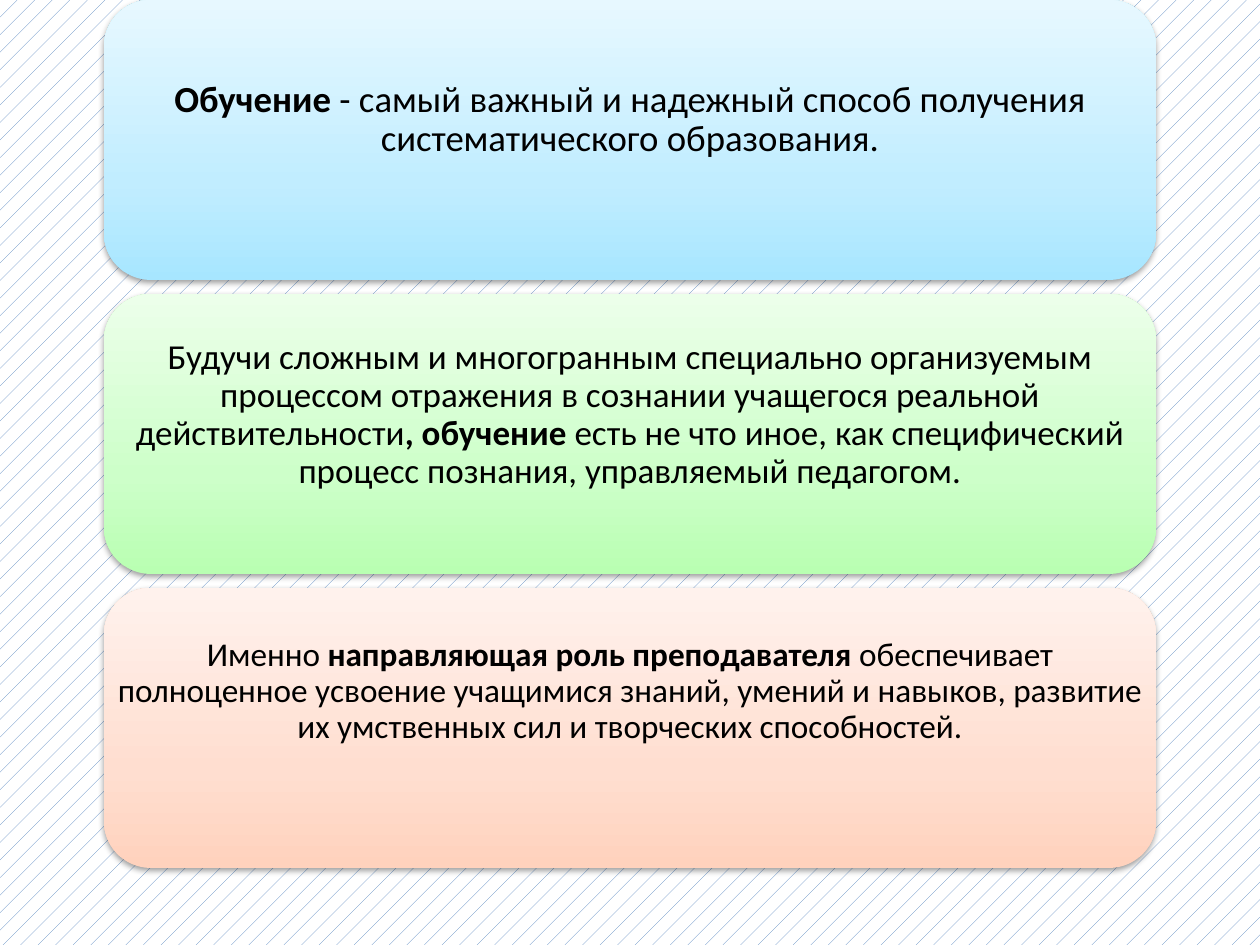
from lxml.etree import SubElement
from pptx import Presentation
from pptx.dml.color import RGBColor
from pptx.enum.dml import MSO_PATTERN
from pptx.enum.shapes import MSO_SHAPE
from pptx.enum.text import MSO_ANCHOR, PP_ALIGN
from pptx.oxml.ns import qn
from pptx.util import Emu, Pt

EMU_PER_PX = 914400 / 126
BLACK = RGBColor(0x00, 0x00, 0x00)
WHITE = RGBColor(0xFF, 0xFF, 0xFF)
HATCH_BLUE = RGBColor(0x4F, 0x81, 0xBD)
BLUES = RGBColor(0xA7, 0xE6, 0xFF), RGBColor(0xC1, 0xED, 0xFF), RGBColor(0xE7, 0xF8, 0xFF)
GREENS = RGBColor(0xB9, 0xFF, 0xB2), RGBColor(0xCD, 0xFF, 0xC9), RGBColor(0xEC, 0xFF, 0xEA)
PEACHES = RGBColor(0xFF, 0xD2, 0xBD), RGBColor(0xFF, 0xDE, 0xD0), RGBColor(0xFF, 0xF2, 0xED)
STOP_POSITIONS = 0, 35000, 100000

CARD_LEFT, CARD_WIDTH, CARD_HEIGHT, CARD_PITCH = 104, 1052, 280, 294

CARDS = [
    (BLUES, 21, 45, [
        ("Обучение", True),
        (" - самый важный и надежный способ получения систематического образования.", False),
    ]),
    (GREENS, 20, 43, [
        ("Будучи сложным и многогранным специально организуемым процессом отражения "
         "в сознании учащегося реальной действительности", False),
        (", обучение ", True),
        ("есть не что иное, как специфический процесс познания, управляемый педагогом.", False),
    ]),
    (PEACHES, 19, 77, [
        ("Именно ", False),
        ("направляющая роль преподавателя ", True),
        ("обеспечивает полноценное усвоение учащимися знаний, умений и навыков, "
         "развитие их умственных сил и творческих способностей.", False),
    ]),
]


def px(length):
    """Turn whole pixels into EMU."""
    return Emu(round(length * EMU_PER_PX))


def fill_gradient(shape, colours):
    """Fill a shape with a three-stop gradient rising from its bottom edge."""
    shape.fill.gradient()
    shape.fill.gradient_angle = 90
    stops = shape._element.spPr.find(qn("a:gradFill")).find(qn("a:gsLst"))
    for stop in list(stops):
        stops.remove(stop)
    for position, colour in zip(STOP_POSITIONS, colours):
        stop = SubElement(stops, qn("a:gs"), pos=str(position))
        SubElement(stop, qn("a:srgbClr"), val=str(colour))


def add_shadow(shape):
    """Give a shape a soft shadow below it."""
    shape.shadow.inherit = False
    effects = shape._element.spPr.find(qn("a:effectLst"))
    shadow = SubElement(effects, qn("a:outerShdw"), blurRad="40000", dist="20000",
                        dir="5400000", rotWithShape="0")
    colour = SubElement(shadow, qn("a:srgbClr"), val=str(BLACK))
    SubElement(colour, qn("a:alpha"), val="38000")


def add_card(shapes, box, colours, size, bottom_margin, spans):
    """Place one rounded card and its centred statement in the given box."""
    card = shapes.add_shape(MSO_SHAPE.ROUNDED_RECTANGLE, *box)
    fill_gradient(card, colours)
    card.line.fill.background()
    add_shadow(card)

    text_frame = shapes.add_textbox(*box).text_frame
    text_frame.word_wrap = True
    text_frame.vertical_anchor = MSO_ANCHOR.MIDDLE
    text_frame.margin_left = text_frame.margin_right = px(10)
    text_frame.margin_top, text_frame.margin_bottom = px(5), px(bottom_margin)
    para = text_frame.paragraphs[0]
    para.alignment = PP_ALIGN.CENTER
    para.line_spacing = 0.9
    for text, bold in spans:
        span = para.add_run()
        span.text = text
        span.font.name = "Calibri"
        span.font.size = Pt(size)
        span.font.bold = bold
        span.font.color.rgb = BLACK


def add_card_stack(page, left, top, width):
    """Stack the cards at an equal pitch in one group."""
    group = page.shapes.add_group_shape()
    for index, card in enumerate(CARDS):
        box = px(left), px(top + index * CARD_PITCH), px(width), px(CARD_HEIGHT)
        add_card(group.shapes, box, *card)


def paint_background(page):
    """Cover the page background with a light blue pattern."""
    fill = page.background.fill
    fill.patterned()
    fill.pattern = MSO_PATTERN.PERCENT_5
    fill.fore_color.rgb = HATCH_BLUE
    fill.back_color.rgb = WHITE


def main():
    """Build the deck and save it."""
    deck = Presentation()
    deck.slide_width, deck.slide_height = px(1260), px(945)
    page = deck.slides.add_slide(deck.slide_layouts[6])
    paint_background(page)
    add_card_stack(page, CARD_LEFT, 0, CARD_WIDTH)
    deck.save("out.pptx")


if __name__ == "__main__":
    main()
